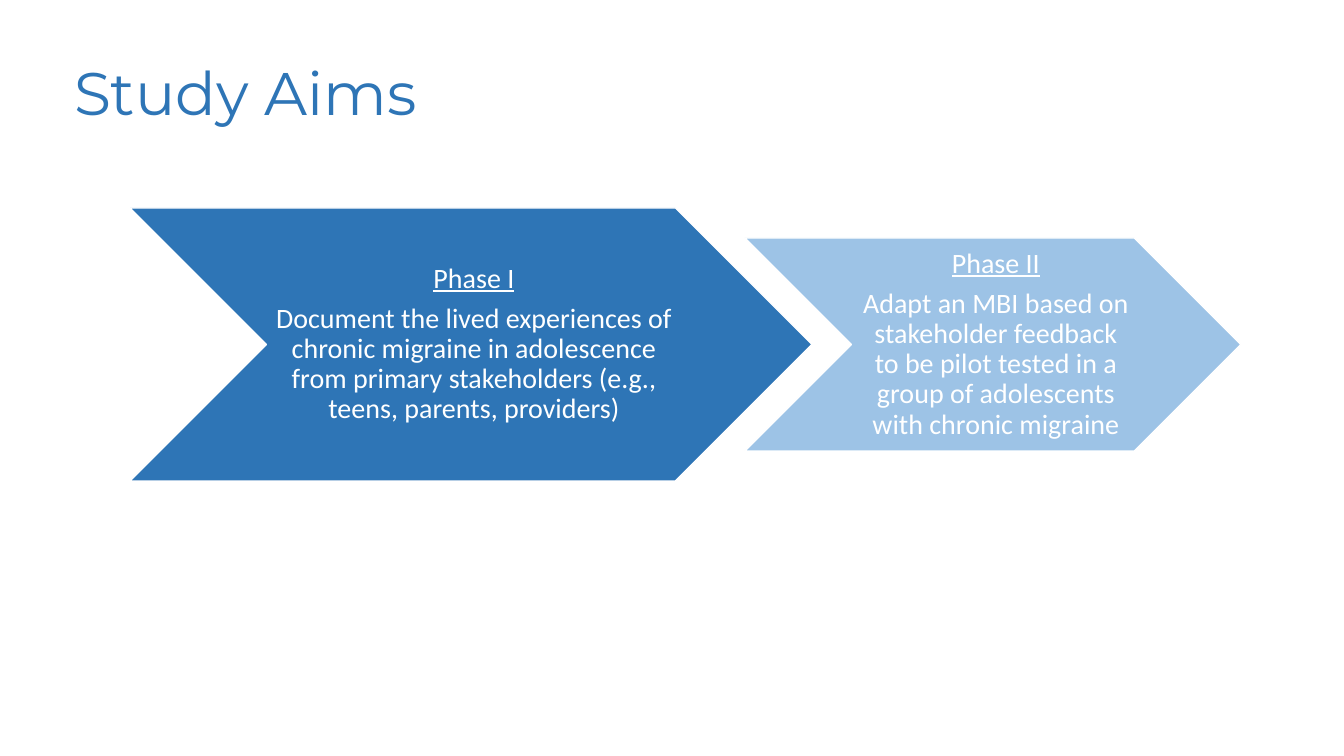
from dataclasses import dataclass

from pptx import Presentation
from pptx.dml.color import RGBColor
from pptx.enum.shapes import MSO_SHAPE
from pptx.enum.text import MSO_ANCHOR, PP_ALIGN
from pptx.slide import Slide
from pptx.util import Emu, Pt

EMU_PER_PX = 914400 / 100.8
BLUE = RGBColor(0x2E, 0x75, 0xB6)
LIGHT_BLUE = RGBColor(0x9D, 0xC3, 0xE6)
WHITE = RGBColor(0xFF, 0xFF, 0xFF)


@dataclass(frozen=True)
class Phase:
    name: str
    aim: str
    left: int
    top: int
    width: int
    height: int
    color: RGBColor


PHASES = [
    Phase(
        "Phase I",
        "Document the lived experiences of chronic migraine in adolescence "
        "from primary stakeholders (e.g., teens, parents, providers)",
        130, 208, 682, 273, BLUE,
    ),
    Phase(
        "Phase II",
        "Adapt an MBI based on stakeholder feedback to be pilot tested in a "
        "group of adolescents with chronic migraine",
        745, 238, 496, 213, LIGHT_BLUE,
    ),
]


def px(length: int) -> Emu:
    return Emu(round(length * EMU_PER_PX))


def add_title(slide: Slide, text: str) -> None:
    title = slide.shapes.title
    title.left, title.top, title.width, title.height = px(64), px(33), px(915), px(194)
    frame = title.text_frame
    frame.text = text
    frame.word_wrap = True
    frame.vertical_anchor = MSO_ANCHOR.TOP
    frame.margin_top = px(31)
    paragraph = frame.paragraphs[0]
    paragraph.alignment = PP_ALIGN.LEFT
    paragraph.line_spacing = 0.9
    font = paragraph.runs[0].font
    font.name, font.size = "Montserrat", Pt(42.9)
    font.color.rgb = BLUE


def add_phase(slide: Slide, phase: Phase) -> None:
    shape = slide.shapes.add_shape(
        MSO_SHAPE.CHEVRON,
        px(phase.left), px(phase.top), px(phase.width), px(phase.height),
    )
    shape.shadow.inherit = False
    shape.fill.solid()
    shape.fill.fore_color.rgb = phase.color
    shape.line.color.rgb = WHITE
    shape.line.width = Pt(1)

    frame = shape.text_frame
    frame.text = f"{phase.name}\n{phase.aim}"
    frame.word_wrap = True
    frame.vertical_anchor = MSO_ANCHOR.MIDDLE
    frame.margin_left = px(9)
    frame.margin_top = frame.margin_right = frame.margin_bottom = px(3)
    for paragraph in frame.paragraphs:
        paragraph.alignment = PP_ALIGN.CENTER
        paragraph.line_spacing = 0.9
        paragraph.space_after = Pt(7)
        font = paragraph.runs[0].font
        font.name, font.size = "Calibri", Pt(20)
        font.color.rgb = WHITE
    frame.paragraphs[0].runs[0].font.underline = True


def main() -> None:
    presentation = Presentation()
    presentation.slide_width, presentation.slide_height = px(1344), px(756)
    # Title Only layout
    slide = presentation.slides.add_slide(presentation.slide_layouts[5])
    add_title(slide, "Study Aims")
    # Chevrons, one per study phase
    for phase in PHASES:
        add_phase(slide, phase)
    presentation.save("out.pptx")


if __name__ == "__main__":
    main()
